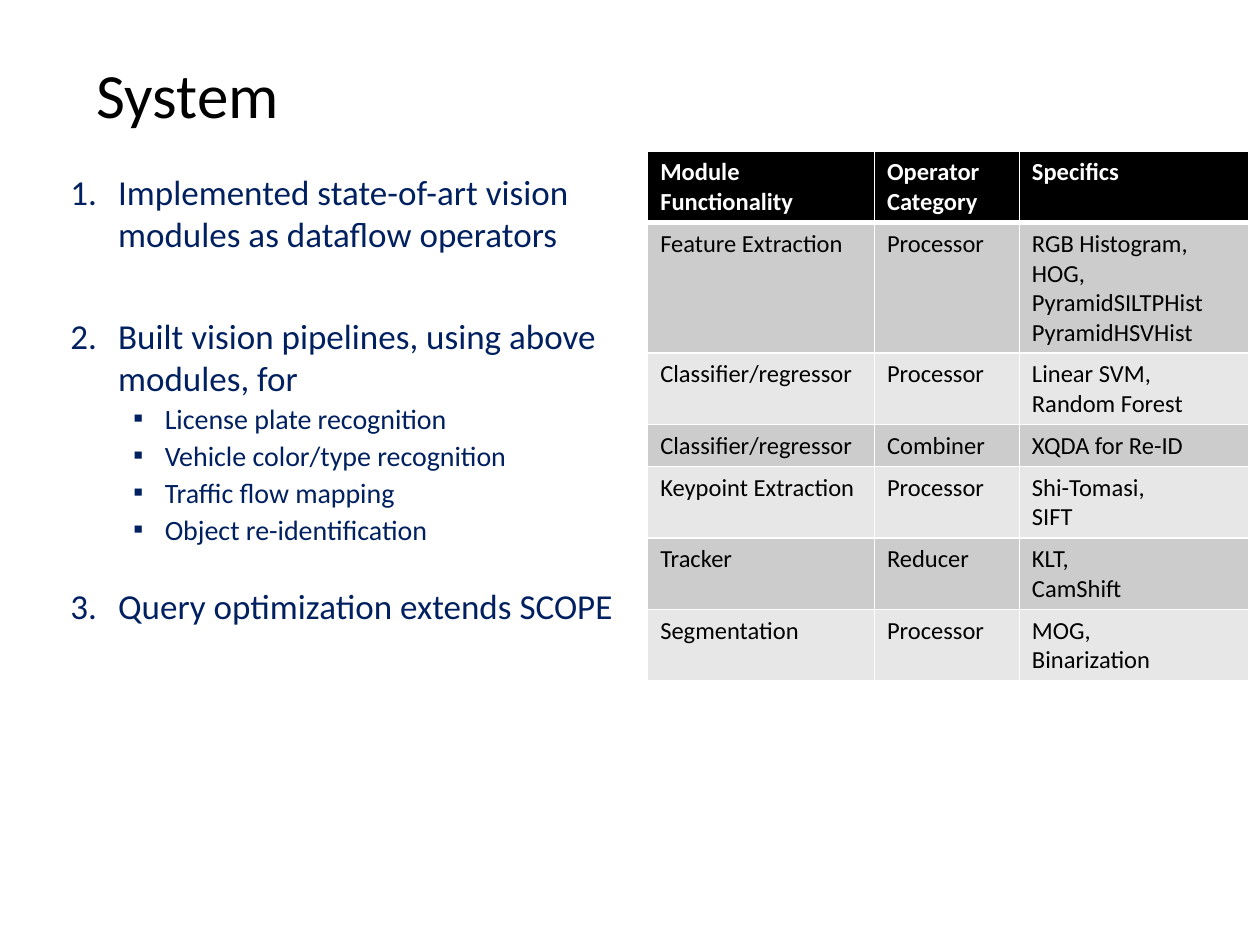
import pptx
import pptx.dml.color
import pptx.enum.text
import pptx.oxml
import pptx.oxml.ns
import pptx.util
from pptx.util import Inches

BLACK, WHITE, NAVY = "000000", "FFFFFF", "002060"
BANDS = ("CCCCCC", "E7E7E7")

OUTLINE = [
    ("Implemented state-of-art vision modules as dataflow operators", []),
    ("Built vision pipelines, using above modules, for",
     ["License plate recognition", "Vehicle color/type recognition",
      "Traffic flow mapping", "Object re-identification"]),
    ("Query optimization extends SCOPE", []),
]
# Space before and line spacing of each numbered point
POINT_SPACING = [(0, 1), (34.4, 1), (10, 1.5)]

MODULES = [
    ("Module Functionality", "Operator Category", "Specifics"),
    ("Feature Extraction", "Processor",
     "RGB Histogram,\nHOG,\nPyramidSILTPHist\nPyramidHSVHist"),
    ("Classifier/regressor", "Processor", "Linear SVM,\nRandom Forest"),
    ("Classifier/regressor", "Combiner", "XQDA for Re-ID"),
    ("Keypoint Extraction", "Processor", "Shi-Tomasi,\nSIFT"),
    ("Tracker", "Reducer", "KLT,\nCamShift"),
    ("Segmentation", "Processor", "MOG,\nBinarization"),
]
COLUMN_WIDTHS = (1.8, 1.15, 1.82)
ROW_HEIGHTS = (0.48, 0.88, 0.48, 0.28, 0.48, 0.48, 0.48)


def rgb(value):
    return pptx.dml.color.RGBColor.from_string(value)


def append_xml(parent, tag, attributes="", inner=""):
    parent.append(pptx.oxml.parse_xml(
        f'<a:{tag} {pptx.oxml.ns.nsdecls("a")} {attributes}>{inner}</a:{tag}>'))


class SlideBuilder:
    """Holds the font and the slide being filled."""

    def __init__(self, slide, font="Calibri"):
        self.slide = slide
        self.font = font

    def run(self, paragraph, text, size, color, bold=False):
        run = paragraph.add_run()
        run.text = text
        run.font.name = self.font
        run.font.size = pptx.util.Pt(size)
        run.font.bold = bold
        run.font.color.rgb = rgb(color)

    def frame(self, left, top, width, height):
        """Add an empty wrapping text box and return its text frame."""
        box = self.slide.shapes.add_textbox(
            Inches(left), Inches(top), Inches(width), Inches(height))
        box.text_frame.word_wrap = True
        return box.text_frame

    def title(self, text, bounds):
        frame = self.frame(*bounds)
        frame.vertical_anchor = pptx.enum.text.MSO_ANCHOR.MIDDLE
        heading = frame.paragraphs[0]
        heading.line_spacing = 0.9
        self.run(heading, text, 36, BLACK)

    def list_item(self, paragraph, text, size, margin, hanging, spacing):
        """Fill an indented paragraph and return its properties element."""
        before, lines = spacing
        paragraph.space_before = pptx.util.Pt(before)
        paragraph.line_spacing = float(lines)
        self.run(paragraph, text, size, NAVY)
        properties = paragraph._p.get_or_add_pPr()
        properties.set("marL", str(Inches(margin)))
        properties.set("indent", str(-Inches(hanging)))
        append_xml(properties, "buFont", f'typeface="{self.font}"')
        return properties

    def outline(self, points, bounds):
        frame = self.frame(*bounds)
        for index, ((point, details), spacing) in enumerate(zip(points, POINT_SPACING)):
            paragraph = frame.add_paragraph() if index else frame.paragraphs[0]
            numbered = self.list_item(paragraph, point, 20, 0.38, 0.38, spacing)
            append_xml(numbered, "buAutoNum", 'type="arabicPeriod"')
            for detail in details:
                paragraph = frame.add_paragraph()
                paragraph.level = 1
                bulleted = self.list_item(paragraph, detail, 16, 0.75, 0.25, (0, 1.1))
                append_xml(bulleted, "buChar", 'char="▪"')

    def cell(self, cell, text, fill, color, header):
        properties = cell._tc.get_or_add_tcPr()
        for side in "LRTB":
            width = pptx.util.Pt(3 if header and side == "B" else 1)
            append_xml(properties, f"ln{side}", f'w="{width}"',
                       f'<a:solidFill><a:srgbClr val="{WHITE}"/></a:solidFill>')
        cell.fill.solid()
        cell.fill.fore_color.rgb = rgb(fill)
        frame = cell.text_frame
        for index, line in enumerate(text.split("\n")):
            paragraph = frame.add_paragraph() if index else frame.paragraphs[0]
            self.run(paragraph, line, 14, color, header)

    def table(self, rows, left, top):
        table = self.slide.shapes.add_table(
            len(rows), len(COLUMN_WIDTHS), Inches(left), Inches(top),
            Inches(sum(COLUMN_WIDTHS)), Inches(sum(ROW_HEIGHTS))).table
        for column, width in zip(table.columns, COLUMN_WIDTHS):
            column.width = Inches(width)
        for row, height in zip(table.rows, ROW_HEIGHTS):
            row.height = Inches(height)
        for r, texts in enumerate(rows):
            header = r == 0
            fill = BLACK if header else BANDS[(r - 1) % 2]
            for c, text in enumerate(texts):
                self.cell(table.cell(r, c), text, fill,
                          WHITE if header else BLACK, header)


def main():
    deck = pptx.Presentation()
    deck.slide_width, deck.slide_height = Inches(10), Inches(7.5)
    builder = SlideBuilder(deck.slides.add_slide(deck.slide_layouts[6]))
    builder.title("System", (0.67, 0.47, 5.81, 0.61))
    builder.outline(OUTLINE, (0.46, 1.3, 4.73, 5.45))
    builder.table(MODULES, 5.14, 1.2)
    deck.save("out.pptx")


if __name__ == "__main__":
    main()
